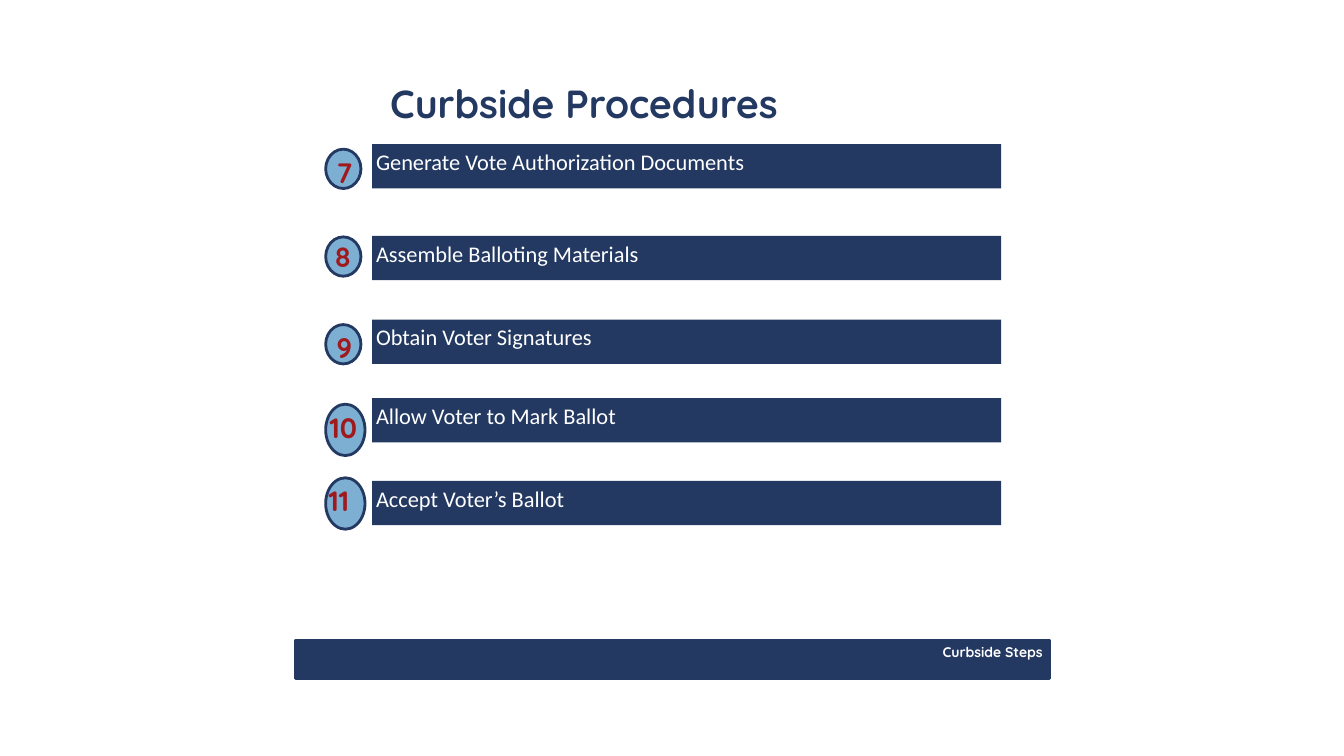
from pptx import Presentation
from pptx.dml.color import RGBColor
from pptx.enum.shapes import MSO_SHAPE as Shape
from pptx.enum.text import MSO_ANCHOR as Anchor, PP_ALIGN as Align
from pptx.util import Inches, Pt

COLORS = {"navy": "233962", "sky": "7DAFD3", "red": "A0191D", "white": "FFFFFF"}

FORMATS = {
    "title": {"name": "Quicksand", "size": Pt(28), "bold": True},
    "step": {"name": "Calibri", "size": Pt(16), "bold": False},
    "number": {"name": "Quicksand", "size": Pt(20), "bold": True},
    "footer": {"name": "Quicksand", "size": Pt(10), "bold": True},
}

BAR_LEFT, BAR_WIDTH, BAR_HEIGHT = 3.69, 6.24, 0.44
BADGE_LEFT = 3.23
SMALL_BADGE, LARGE_BADGE = (0.35, 0.39), (0.39, 0.51)

# Number, label, bar top, badge top, badge size, number box
STEPS = [
    ("7", "Generate Vote Authorization Documents", 1.43, 1.48, SMALL_BADGE, (3.3, 1.5, 0.2, 0.35)),
    ("8", "Assemble Balloting Materials", 2.34, 2.35, SMALL_BADGE, (3.28, 2.34, 0.2, 0.35)),
    ("9", "Obtain Voter Signatures", 3.17, 3.22, SMALL_BADGE, (3.3, 3.24, 0.16, 0.35)),
    ("10", "Allow Voter to Mark Ballot", 3.95, 4.01, LARGE_BADGE, (3.23, 4.03, 0.61, 0.46)),
    ("11", "Accept Voter’s Ballot", 4.77, 4.74, LARGE_BADGE, (3.22, 4.76, 0.61, 0.46)),
]


def rgb(color):
    return RGBColor.from_string(COLORS[color])


def write_text(shape, text, style, color, align=Align.LEFT):
    frame = shape.text_frame
    settings = {"word_wrap": True, "vertical_anchor": Anchor.TOP}
    for side in ("left", "top", "right", "bottom"):
        settings[f"margin_{side}"] = Inches(0.04)
    for key, value in settings.items():
        setattr(frame, key, value)
    para = frame.paragraphs[0]
    para.alignment = align
    span = para.add_run()
    span.text = text
    for key, value in FORMATS[style].items():
        setattr(span.font, key, value)
    span.font.color.rgb = rgb(color)


def add_text(shapes, box, *content):
    write_text(shapes.add_textbox(*map(Inches, box)), *content)


def add_block(shapes, kind, box, fill, outline=None):
    shape = shapes.add_shape(kind, *map(Inches, box))
    shape.shadow.inherit = False
    shape.fill.solid()
    shape.fill.fore_color.rgb = rgb(fill)
    if outline:
        shape.line.color.rgb = rgb(outline)
        shape.line.width = Pt(2)
    else:
        shape.line.fill.background()
    return shape


def add_footer(page, box):
    left, top, width, height = box
    add_block(page.shapes, Shape.RECTANGLE, box, "navy", "navy")
    label_box = (left + 1.28, top - 0.01, width - 1.31, height + 0.01)
    add_text(page.shapes, label_box, "Curbside Steps", "footer", "white", Align.RIGHT)


def add_step(page, number, label, bar_top, badge_top, badge_size, number_box):
    # Labelled bar
    bar_box = (BAR_LEFT, bar_top, BAR_WIDTH, BAR_HEIGHT)
    bar = add_block(page.shapes, Shape.RECTANGLE, bar_box, "navy")
    write_text(bar, label, "step", "white")
    # Numbered badge
    badge = page.shapes.add_group_shape()
    badge_box = (BADGE_LEFT, badge_top, *badge_size)
    add_block(badge.shapes, Shape.FLOWCHART_CONNECTOR, badge_box, "sky", "navy")
    add_text(badge.shapes, number_box, number, "number", "red")


def main():
    deck = Presentation()
    deck.slide_width, deck.slide_height = Inches(13.33), Inches(7.5)
    page = deck.slides.add_slide(deck.slide_layouts[6])
    add_footer(page, (2.93, 6.35, 7.48, 0.38))
    add_text(page.shapes, (3.83, 0.75, 6.21, 0.5), "Curbside Procedures", "title", "navy")
    for step in STEPS:
        add_step(page, *step)
    deck.save("out.pptx")


if __name__ == "__main__":
    main()
